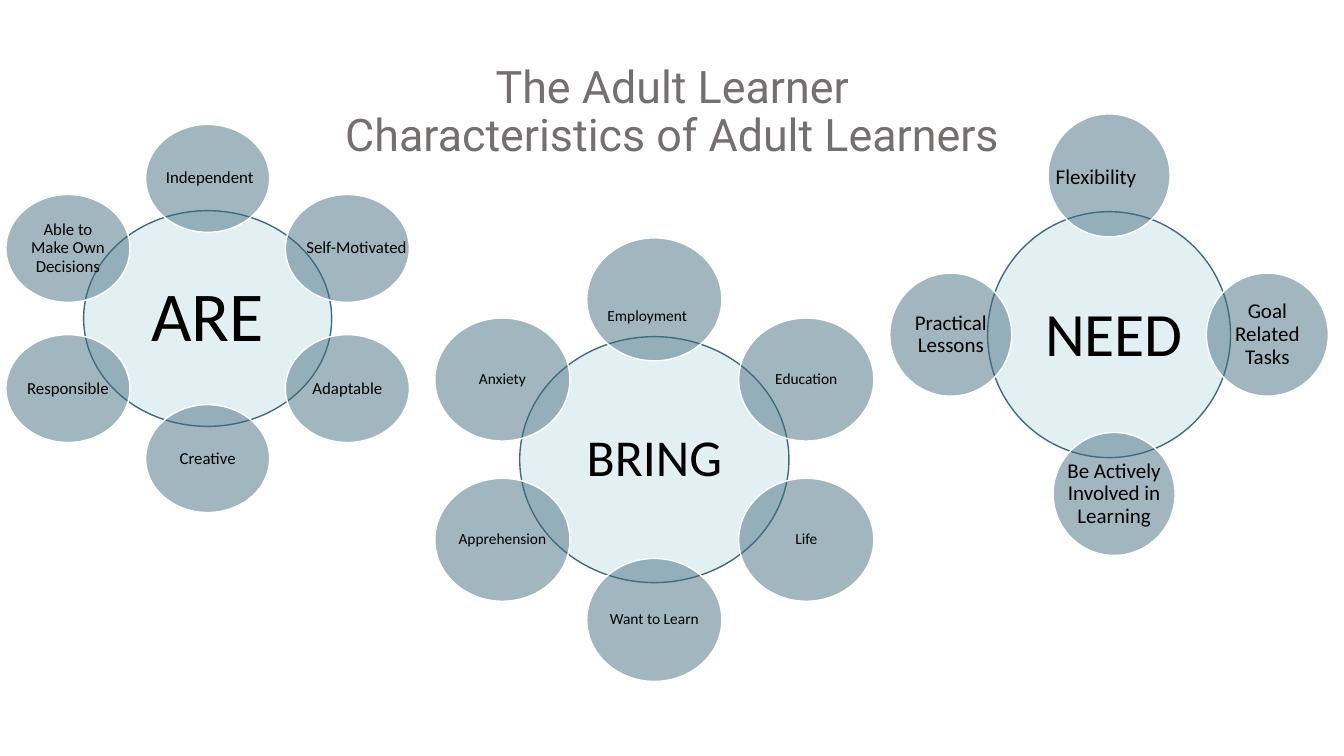
import math
from dataclasses import dataclass

import pptx
import pptx.dml.color
import pptx.enum.shapes
import pptx.enum.text
import pptx.oxml.ns
import pptx.util
from lxml import etree
from pptx.util import Inches

HUB_FILL, BUBBLE_FILL = "C6E1E7", "426C7D"
INSCRIBED = math.sqrt(0.5)  # side of the text area inside an ellipse


@dataclass
class Bubble:
    label: str
    label_shift: tuple = (0, 0)
    label_width: float = 0  # 0 keeps the width that fits inside the ellipse
    shift: tuple = (0, 0)


@dataclass
class Cluster:
    """A hub with bubbles spaced clockwise from the top; lengths in inches."""
    word: str
    word_size: int
    word_shift: tuple
    center: tuple
    hub_size: tuple
    orbit: tuple
    bubble_size: tuple
    label_size: int
    bubbles: list


CLUSTERS = [
    Cluster("ARE", 50, (0, 0), (2.06, 3.16), (2.46, 2.14), (1.6, 1.39), (1.23, 1.07), 12, [
        Bubble("Independent", (0.02, 0), 1.05),
        Bubble("Self-Motivated", (0.09, 0), 1.05),
        Bubble("Adaptable"),
        Bubble("Creative"),
        Bubble("Responsible"),
        Bubble("Able to Make Own Decisions"),
    ]),
    Cluster("BRING", 37, (0, 0), (6.49, 4.56), (2.67, 2.44), (1.74, 1.59), (1.34, 1.22), 11, [
        Bubble("Employment", (-0.07, 0.17)),
        Bubble("Education"),
        Bubble("Life"),
        Bubble("Want to Learn"),
        Bubble("Apprehension"),
        Bubble("Anxiety"),
    ]),
    Cluster("NEED", 44, (0.05, 0.02), (11, 3.32), (2.41, 2.44), (1.57, 1.58), (1.21, 1.22), 15, [
        Bubble("Flexibility", (-0.13, 0.02)),
        Bubble("Goal\nRelated\nTasks"),
        Bubble("Be Actively Involved in Learning", label_width=1.21, shift=(0.05, 0)),
        Bubble("Practical Lessons"),
    ]),
]


def rgb(color):
    return pptx.dml.color.RGBColor.from_string(color)


def moved(point, shift):
    return point[0] + shift[0], point[1] + shift[1]


def box_around(center, size):
    """Left, top, width and height of a box with this center."""
    (x, y), (width, height) = center, size
    return [Inches(v) for v in (x - width / 2, y - height / 2, width, height)]


def add_ellipse(shapes, center, size, fill, outline):
    ellipse = shapes.add_shape(pptx.enum.shapes.MSO_SHAPE.OVAL, *box_around(center, size))
    ellipse.shadow.inherit = False
    ellipse.fill.solid()
    ellipse.fill.fore_color.rgb = rgb(fill)
    color = ellipse.fill._xPr.find(".//" + pptx.oxml.ns.qn("a:srgbClr"))
    etree.SubElement(color, pptx.oxml.ns.qn("a:alpha"), val="49000")
    ellipse.line.color.rgb = rgb(outline)
    ellipse.line.width = pptx.util.Pt(1)


def add_text(shapes, center, size, text, points, font="Calibri", color="000000", margin=0.02):
    frame = shapes.add_textbox(*box_around(center, size)).text_frame
    frame.word_wrap = True
    frame.vertical_anchor = pptx.enum.text.MSO_ANCHOR.MIDDLE
    frame.margin_left = frame.margin_right = Inches(margin)
    frame.margin_top = frame.margin_bottom = Inches(margin)
    frame.text = text
    for paragraph in frame.paragraphs:
        paragraph.alignment = pptx.enum.text.PP_ALIGN.CENTER
        paragraph.line_spacing = 0.9
        paragraph.font.name = font
        paragraph.font.size = pptx.util.Pt(points)
        paragraph.font.color.rgb = rgb(color)


def add_cluster(slide, cluster):
    shapes = slide.shapes.add_group_shape().shapes
    add_ellipse(shapes, cluster.center, cluster.hub_size, HUB_FILL, BUBBLE_FILL)
    word_area = [side * INSCRIBED for side in cluster.hub_size]
    add_text(shapes, moved(cluster.center, cluster.word_shift), word_area,
             cluster.word, cluster.word_size)

    radius_x, radius_y = cluster.orbit
    label_width, label_height = [side * INSCRIBED for side in cluster.bubble_size]
    for i, bubble in enumerate(cluster.bubbles):
        angle = 2 * math.pi * i / len(cluster.bubbles)
        orbit_point = radius_x * math.sin(angle), -radius_y * math.cos(angle)
        center = moved(moved(cluster.center, orbit_point), bubble.shift)
        add_ellipse(shapes, center, cluster.bubble_size, BUBBLE_FILL, "FFFFFF")
        add_text(shapes, moved(center, bubble.label_shift),
                 (bubble.label_width or label_width, label_height),
                 bubble.label, cluster.label_size)


def main():
    deck = pptx.Presentation()
    deck.slide_width, deck.slide_height = Inches(13.33), Inches(7.5)
    slide = deck.slides.add_slide(deck.slide_layouts[6])
    add_text(slide.shapes, (6.67, 1.12), (11.5, 1.45),
             "The Adult Learner\vCharacteristics of Adult Learners",
             32, "Roboto", "757070", margin=0.05)
    for cluster in CLUSTERS:
        add_cluster(slide, cluster)
    deck.save("out.pptx")


if __name__ == "__main__":
    main()
